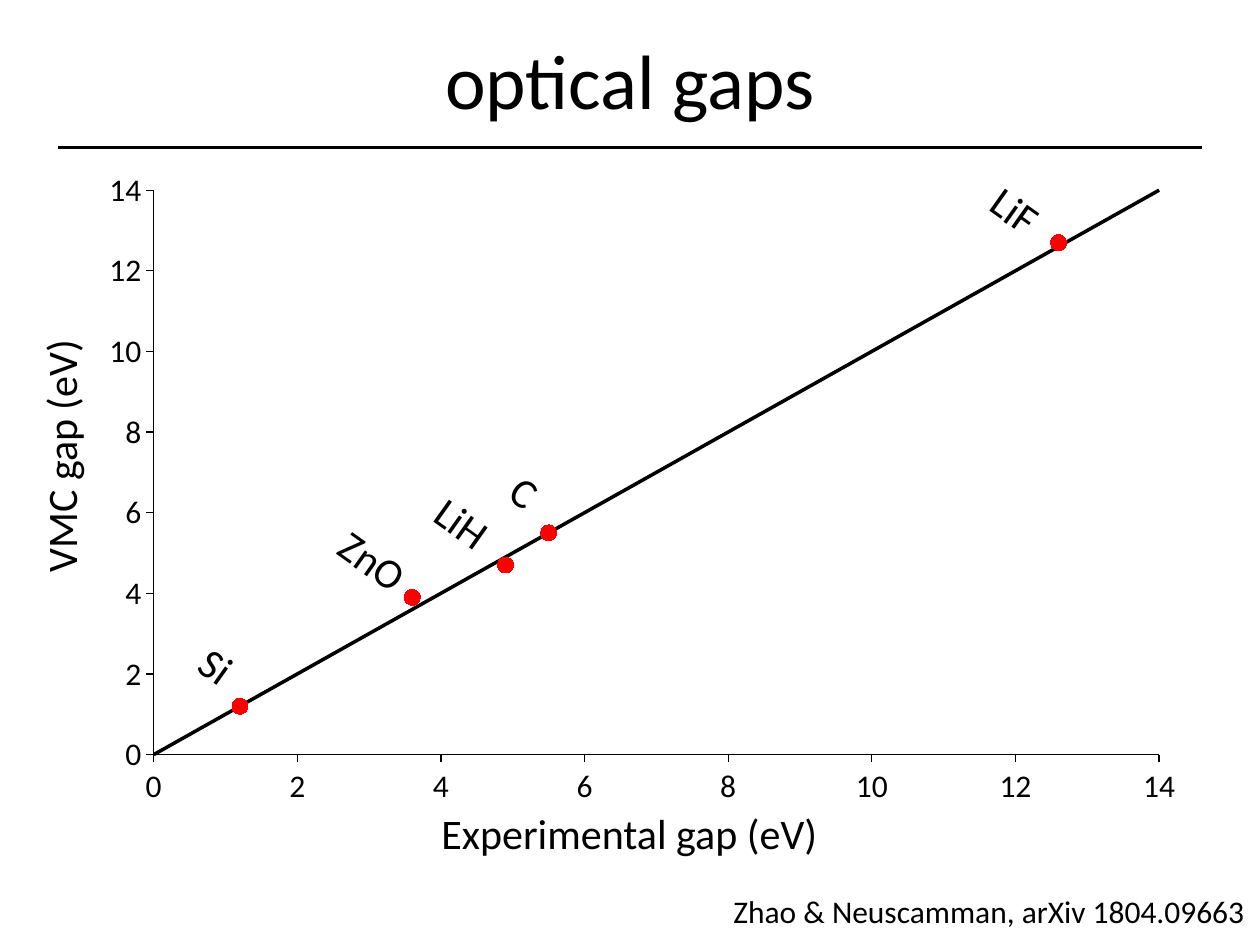
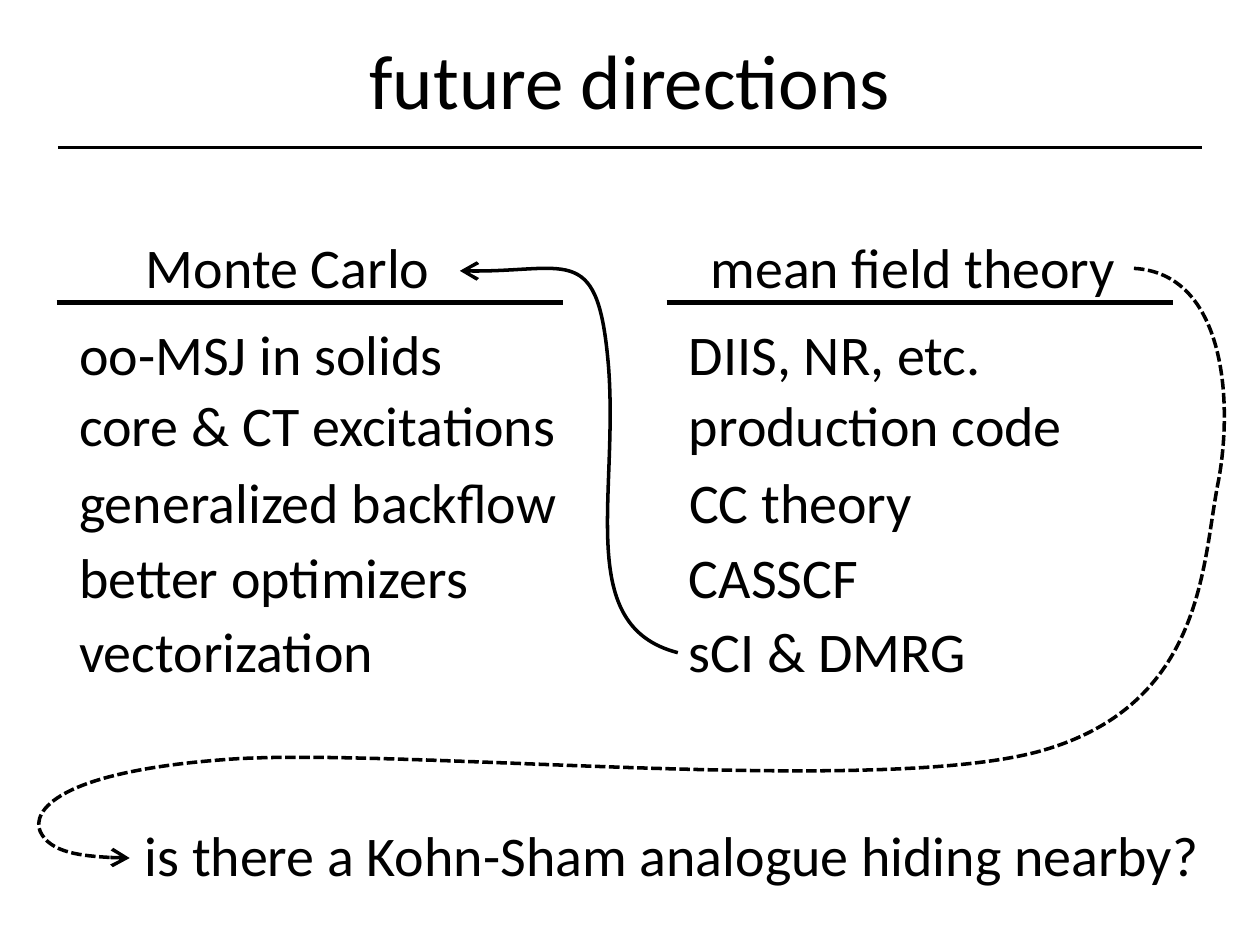
from dataclasses import dataclass

from lxml.etree import SubElement
from pptx import Presentation
from pptx.chart.data import XyChartData as XyData
from pptx.dml.color import RGBColor as Rgb
from pptx.enum.chart import XL_CHART_TYPE as Kind
from pptx.enum.chart import XL_MARKER_STYLE as Mark
from pptx.enum.chart import XL_TICK_MARK as Tick
from pptx.enum.dml import MSO_LINE as Dash
from pptx.enum.shapes import MSO_CONNECTOR as Link
from pptx.enum.text import MSO_ANCHOR as Anchor
from pptx.enum.text import MSO_AUTO_SIZE as Fit
from pptx.enum.text import PP_ALIGN as Align
from pptx.oxml.ns import qn
from pptx.util import Inches, Pt


@dataclass(frozen=True)
class Theme:
    font: str = "Calibri"
    ink: Rgb = Rgb(0, 0, 0)
    dot: Rgb = Rgb(255, 0, 0)
    title: int = 44
    body: int = 32
    label: int = 24
    small: int = 18
    tilt: float = 35.4


THEME = Theme()
TITLE = (0.5, 0, 9, 1.25)
CHART = (0.69, 1.25, 8.81, 5.24)
PLOT = (1.22, 1.51, 7.98, 4.48)
GAPS = [(0, None), (1.2, 1.2), (3.6, 3.9), (4.9, 4.7),
        (5.5, 5.5), (12.6, 12.7), (15, None)]
SOLIDS = [
    ("Si", 1.51, 5.03, 0.43),
    ("ZnO", 2.59, 4.2, 0.76),
    ("LiH", 3.36, 3.9, 0.63),
    ("C", 3.98, 3.65, 0.38),
    ("LiF", 7.78, 1.42, 0.58),
]
ROWS = (2.49, 3.05, 3.66, 4.26, 4.84)
MONTE = [
    ("oo-MSJ in solids", 3.12),
    ("core & CT excitations", 4.02),
    ("generalized backflow", 4.03),
    ("better optimizers", 3.33),
    ("vectorization", 2.56),
]
FIELD = [
    ("DIIS, NR, etc.", 2.54),
    ("production code", 3.2),
    ("CC theory", 1.99),
    ("CASSCF", 1.56),
    ("sCI & DMRG", 2.43),
]
SWEEP = [
    (9, 2.13),
    (9.72, 2.17), (9.79, 3.18), (9.67, 3.82),
    (9.54, 4.46), (9.57, 5.59), (8.26, 5.96),
    (6.94, 6.33), (3.09, 5.92), (1.77, 6.03),
    (0.45, 6.13), (0.25, 6.44), (0.32, 6.6),
    (0.4, 6.77), (0.76, 6.81), (1.03, 6.81),
]
HOOK = [
    (5.38, 5.18),
    (4.56, 4.97), (4.91, 3.95), (4.83, 2.91),
    (4.75, 1.94), (4.5, 2.17), (3.65, 2.15),
]


def style(font, size):
    font.name = THEME.font
    font.size = Pt(size)
    font.color.rgb = THEME.ink


def stroke(line, width):
    line.color.rgb = THEME.ink
    line.width = Pt(width)


def write(slide, text, box, size=THEME.body, align=Align.LEFT, turn=0):
    shape = slide.shapes.add_textbox(*map(Inches, box))
    shape.rotation = turn
    frame = shape.text_frame
    frame.word_wrap = False
    frame.auto_size = Fit.SHAPE_TO_FIT_TEXT
    para = frame.paragraphs[0]
    para.text = text
    para.alignment = align
    style(para.runs[0].font, size)


def rule(slide, left, top, width, weight):
    ends = map(Inches, (left, top, left + width, top))
    line = slide.shapes.add_connector(Link.STRAIGHT, *ends)
    stroke(line.line, weight)
    SubElement(line.element.spPr, qn("a:effectLst"))


def curve(slide, points, dash=None):
    start, *rest = [tuple(map(Inches, point)) for point in points]
    pen = slide.shapes.build_freeform(*start)
    pen.add_line_segments(rest, close=False)
    shape = pen.convert_to_shape()
    shape.fill.background()
    stroke(shape.line, 2)
    if dash:
        shape.line.dash_style = dash
    shape.shadow.inherit = False
    props = shape.element.spPr
    SubElement(props.find(qn("a:ln")), qn("a:tailEnd"),
               type="arrow", w="lg", len="lg")
    track = next(props.iter(qn("a:path")))
    steps = track.findall(qn("a:lnTo"))
    for first in range(0, len(steps), 3):
        bend = SubElement(track, qn("a:cubicBezTo"))
        for step in steps[first:first + 3]:
            bend.append(step[0])
            track.remove(step)


def begin(deck, text):
    slide = deck.slides.add_slide(deck.slide_layouts[5])
    rule(slide, 0.46, 1.17, 9.08, 1.5)
    title = slide.shapes.title
    title.left, title.top, title.width, title.height = map(Inches, TITLE)
    frame = title.text_frame
    frame.text = text
    frame.vertical_anchor = Anchor.MIDDLE
    para = frame.paragraphs[0]
    para.alignment = Align.CENTER
    style(para.runs[0].font, THEME.title)
    return slide


def place(chart, box, plot):
    area = chart.element.find(".//" + qn("c:plotArea"))
    frame = area.find(qn("c:layout"))
    if frame is None:
        frame = SubElement(area, qn("c:layout"))
        area.insert(0, frame)
    form = SubElement(frame, qn("c:manualLayout"))
    x, y, wide, high = box
    left, top, width, height = plot
    marks = {
        "layoutTarget": "inner", "xMode": "edge", "yMode": "edge",
        "x": (left - x) / wide, "y": (top - y) / high,
        "w": width / wide, "h": height / high,
    }
    for name, value in marks.items():
        SubElement(form, qn("c:" + name), val=str(value))


def prune(chart):
    for point in list(chart.element.iter(qn("c:pt"))):
        if point.findtext(qn("c:v")) in ("None", ""):
            point.getparent().remove(point)


def scatter(slide, box):
    data = XyData()
    dots = data.add_series("Series 1")
    ideal = data.add_series("Series 2")
    for x, y in GAPS:
        dots.add_data_point(x, y)
        ideal.add_data_point(x, x)
    chart = slide.shapes.add_chart(Kind.XY_SCATTER, *map(Inches, box), data).chart
    prune(chart)
    chart.has_legend = chart.has_title = False
    style(chart.font, 10)
    place(chart, box, PLOT)
    for axis in (chart.category_axis, chart.value_axis):
        axis.minimum_scale, axis.maximum_scale = 0, 14
        axis.major_unit = 2
        axis.has_major_gridlines = False
        axis.major_tick_mark = Tick.OUTSIDE
        axis.minor_tick_mark = Tick.NONE
        style(axis.tick_labels.font, THEME.small)
        stroke(axis.format.line, 0.75)
    plot = chart.plots[0]
    plot.vary_by_categories = False
    dots, ideal = plot.series
    dots.smooth = ideal.smooth = False
    dots.format.line.fill.background()
    dots.marker.style = Mark.CIRCLE
    dots.marker.size = 9
    look = dots.marker.format
    for part in (dots.format.fill, look.fill, look.line.fill):
        part.solid()
        part.fore_color.rgb = THEME.dot
    ideal.marker.style = Mark.NONE
    stroke(ideal.format.line, 2)


def column(slide, left, head, indent, width, items):
    write(slide, head, (left + indent, 1.8, width, 0.64))
    rule(slide, left, 2.4, 4.02, 3)
    for top, (text, wide) in zip(ROWS, items):
        write(slide, text, (left + 0.08, top, wide, 0.64))


def optics(deck):
    slide = begin(deck, "optical gaps")
    scatter(slide, CHART)
    write(slide, "Experimental gap (eV)", (3.39, 6.36, 3.21, 0.5),
          size=THEME.label, align=Align.CENTER)
    write(slide, "VMC gap (eV)", (-0.55, 3.37, 2.06, 0.5),
          size=THEME.label, align=Align.CENTER, turn=270)
    for text, left, top, width in SOLIDS:
        write(slide, text, (left, top, width, 0.5),
              size=THEME.label, turn=THEME.tilt)
    write(slide, "Zhao & Neuscamman, arXiv 1804.09663", (5.7, 7.03, 4.3, 0.4),
          size=THEME.small, align=Align.CENTER)


def future(deck):
    slide = begin(deck, "future directions")
    column(slide, 0.45, "Monte Carlo", 0.61, 2.48, MONTE)
    column(slide, 5.29, "mean field theory", 0.25, 3.45, FIELD)
    write(slide, "is there a Kohn-Sham analogue hiding nearby?",
          (1.05, 6.46, 8.67, 0.64))
    curve(slide, SWEEP, dash=Dash.SQUARE_DOT)
    curve(slide, HOOK)


def main():
    deck = Presentation()
    deck.slide_width, deck.slide_height = Inches(10), Inches(7.5)
    optics(deck)
    future(deck)
    deck.save("out.pptx")


if __name__ == "__main__":
    main()
